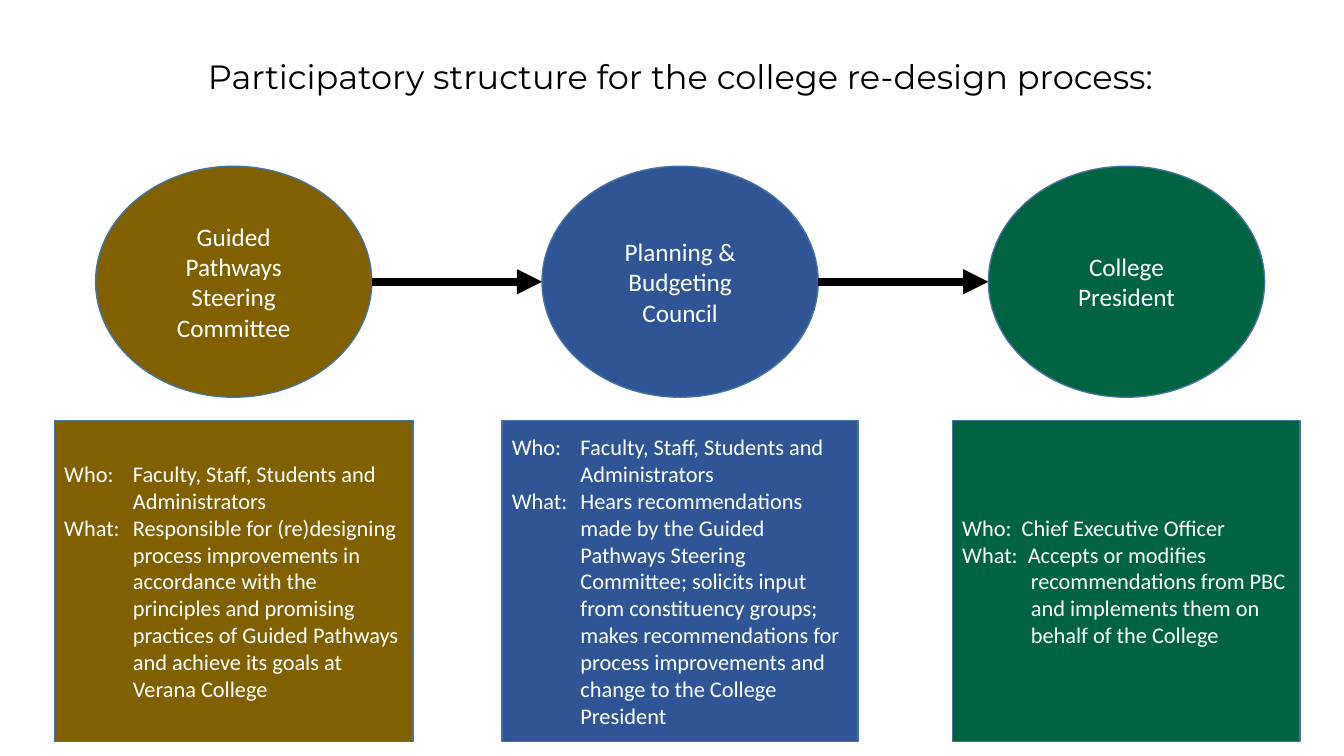
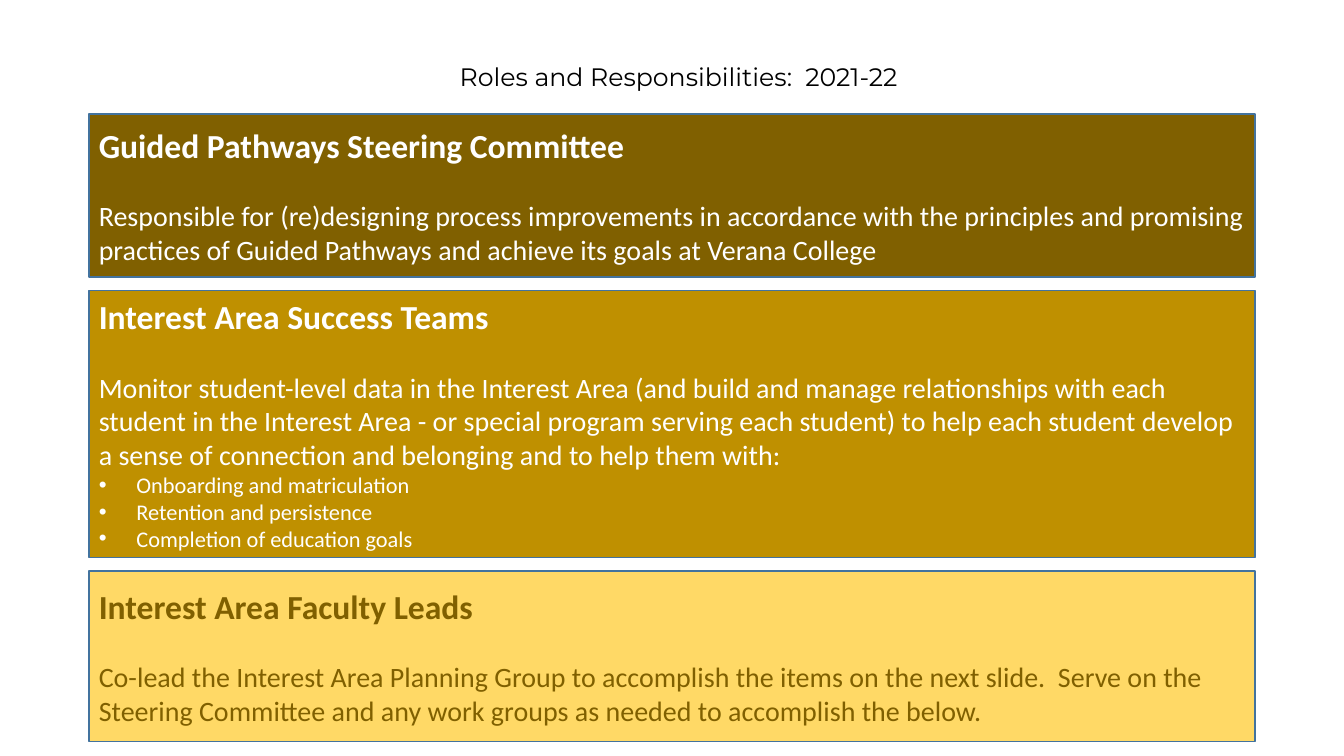
from dataclasses import dataclass

import lxml.etree
import pptx
import pptx.dml.color
import pptx.enum.shapes
import pptx.enum.text
import pptx.oxml.ns
import pptx.shapes.autoshape
import pptx.slide
import pptx.text.text
import pptx.util

BLACK = pptx.dml.color.RGBColor(0x00, 0x00, 0x00)
WHITE = pptx.dml.color.RGBColor(0xFF, 0xFF, 0xFF)
BROWN = pptx.dml.color.RGBColor(0x80, 0x60, 0x00)
GOLD = pptx.dml.color.RGBColor(0xBF, 0x90, 0x00)
SAND = pptx.dml.color.RGBColor(0xFF, 0xD9, 0x66)
BLUE = pptx.dml.color.RGBColor(0x2F, 0x55, 0x97)
GREEN = pptx.dml.color.RGBColor(0x00, 0x63, 0x42)
EDGE = pptx.dml.color.RGBColor(0x43, 0x73, 0x9E)

LEFT = pptx.enum.text.PP_ALIGN.LEFT
CENTER = pptx.enum.text.PP_ALIGN.CENTER
RECT = pptx.enum.shapes.MSO_SHAPE.RECTANGLE
OVAL = pptx.enum.shapes.MSO_SHAPE.OVAL


@dataclass(frozen=True)
class Area:
    """A place on the slide, in centimetres."""
    left: float
    top: float
    width: float
    height: float


@dataclass(frozen=True)
class Stage:
    name: str
    who: str
    what: str
    fill: pptx.dml.color.RGBColor
    left: float
    width: float


@dataclass(frozen=True)
class Band:
    head: str
    body: str
    fill: pptx.dml.color.RGBColor
    ink: pptx.dml.color.RGBColor
    height: float
    points: tuple[str, ...] = ()


TEAM = "Guided Pathways Steering Committee"
STAFF = "Who:\tFaculty, Staff, Students and Administrators"
DUTY = ("Responsible for (re)designing process improvements in accordance with "
        "the principles and promising practices of Guided Pathways and achieve "
        "its goals at Verana College")

STAGES = (
    Stage(TEAM, STAFF, "What:\t" + DUTY, BROWN, 1.37, 9.04),
    Stage("Planning & Budgeting Council", STAFF,
          "What:\tHears recommendations made by the Guided Pathways Steering "
          "Committee; solicits input from constituency groups; makes "
          "recommendations for process improvements and change to the College "
          "President",
          BLUE, 12.65, 8.97),
    Stage("College President",
          "Who:  Chief Executive Officer",
          "What:  Accepts or modifies recommendations from PBC and implements "
          "them on behalf of the College",
          GREEN, 24, 8.76),
)

BANDS = (
    Band(TEAM, DUTY, BROWN, WHITE, 4.11),
    Band("Interest Area Success Teams",
         "Monitor student-level data in the Interest Area (and build and manage "
         "relationships with each student in the Interest Area - or special "
         "program serving each student) to help each student develop a sense of "
         "connection and belonging and to help them with:",
         GOLD, WHITE, 6.73,
         ("Onboarding and matriculation", "Retention and persistence",
          "Completion of education goals")),
    Band("Interest Area Faculty Leads",
         "Co-lead the Interest Area Planning Group to accomplish the items on "
         "the next slide.  Serve on the Steering Committee and any work groups "
         "as needed to accomplish the below.",
         SAND, BROWN, 4.29),
)


def add_slide(deck, title: str, area: Area, size: float) -> pptx.slide.Slide:
    slide = deck.slides.add_slide(deck.slide_layouts[5])
    shape = slide.shapes.title
    shape.left, shape.top = pptx.util.Cm(area.left), pptx.util.Cm(area.top)
    shape.width, shape.height = pptx.util.Cm(area.width), pptx.util.Cm(area.height)
    frame = shape.text_frame
    frame.vertical_anchor = pptx.enum.text.MSO_ANCHOR.MIDDLE
    frame.text = title
    line = frame.paragraphs[0]
    line.line_spacing = 0.9
    style(line, size, BLACK, CENTER, face="Montserrat")
    return slide


def style(line: pptx.text.text._Paragraph, size: float,
          ink: pptx.dml.color.RGBColor, align=LEFT, bold: bool = False,
          face: str = "Calibri") -> None:
    line.alignment = align
    line.font.name = face
    line.font.size = pptx.util.Pt(size)
    line.font.bold = bold
    line.font.color.rgb = ink


def hang(line: pptx.text.text._Paragraph, depth: float, mark: str = "") -> None:
    """Give the paragraph a hanging indent, with a bullet if mark is set."""
    props = line._p.get_or_add_pPr()
    props.set("marL", str(pptx.util.Cm(depth)))
    props.set("indent", str(-pptx.util.Cm(depth)))
    if mark:
        font = lxml.etree.SubElement(props, pptx.oxml.ns.qn("a:buFont"))
        font.set("typeface", "Arial")
        sign = lxml.etree.SubElement(props, pptx.oxml.ns.qn("a:buChar"))
        sign.set("char", mark)


def add_block(slide: pptx.slide.Slide, kind, area: Area,
              fill: pptx.dml.color.RGBColor,
              texts: tuple[str, ...]) -> list[pptx.text.text._Paragraph]:
    """Draw a filled shape and return its paragraphs, one for each text."""
    shape = slide.shapes.add_shape(
        kind, pptx.util.Cm(area.left), pptx.util.Cm(area.top),
        pptx.util.Cm(area.width), pptx.util.Cm(area.height))
    shape.shadow.inherit = False
    shape.fill.solid()
    shape.fill.fore_color.rgb = fill
    shape.line.color.rgb = EDGE
    shape.line.width = pptx.util.Pt(1)
    frame = shape.text_frame
    frame.word_wrap = True
    frame.vertical_anchor = pptx.enum.text.MSO_ANCHOR.MIDDLE
    frame.text = "\n".join(texts)
    return list(frame.paragraphs)


def add_arrow(slide: pptx.slide.Slide, start: float, end: float, top: float) -> None:
    arrow = slide.shapes.add_connector(
        pptx.enum.shapes.MSO_CONNECTOR.STRAIGHT,
        pptx.util.Cm(start), pptx.util.Cm(top), pptx.util.Cm(end), pptx.util.Cm(top))
    arrow.line.color.rgb = BLACK
    arrow.line.width = pptx.util.Pt(6)
    tip = lxml.etree.SubElement(arrow.line._get_or_add_ln(),
                                pptx.oxml.ns.qn("a:tailEnd"))
    tip.set("type", "triangle")
    lxml.etree.SubElement(arrow._element.spPr, pptx.oxml.ns.qn("a:effectLst"))


def draw_stages(slide: pptx.slide.Slide) -> None:
    first, pitch, top, width, height = 2.41, 11.25, 4.19, 6.96, 5.82
    for index, stage in enumerate(STAGES):
        left = first + index * pitch
        if index:
            add_arrow(slide, left - pitch + width, left, top + height / 2)
        for line in add_block(slide, OVAL, Area(left, top, width, height),
                              stage.fill, (stage.name,)):
            style(line, 18, WHITE, CENTER)
        for line in add_block(slide, RECT, Area(stage.left, 10.59, stage.width, 8.1),
                              stage.fill, (stage.who, stage.what)):
            hang(line, 1.73)
            style(line, 16, WHITE)


def draw_bands(slide: pptx.slide.Slide) -> None:
    top, gap = 2.87, 0.34
    for band in BANDS:
        head, body, *points = add_block(
            slide, RECT, Area(2.24, top, 29.39, band.height), band.fill,
            (band.head, band.body, *band.points))
        style(head, 24, band.ink, bold=True)
        head.space_after = pptx.util.Pt(24)
        style(body, 20, band.ink)
        for point in points:
            hang(point, 0.95, "•")
            style(point, 16, band.ink)
        top += band.height + gap


def main() -> None:
    deck = pptx.Presentation()
    deck.slide_width = pptx.util.Cm(33.87)
    deck.slide_height = pptx.util.Cm(19.05)
    draw_stages(add_slide(
        deck, "Participatory structure for the college re-design process:",
        Area(2.54, 0.15, 29.21, 3.68), 24))
    draw_bands(add_slide(
        deck, "Roles and Responsibilities:  2021-22",
        Area(2.5, 1.22, 29.21, 1.5), 18))
    deck.save("out.pptx")


if __name__ == "__main__":
    main()
